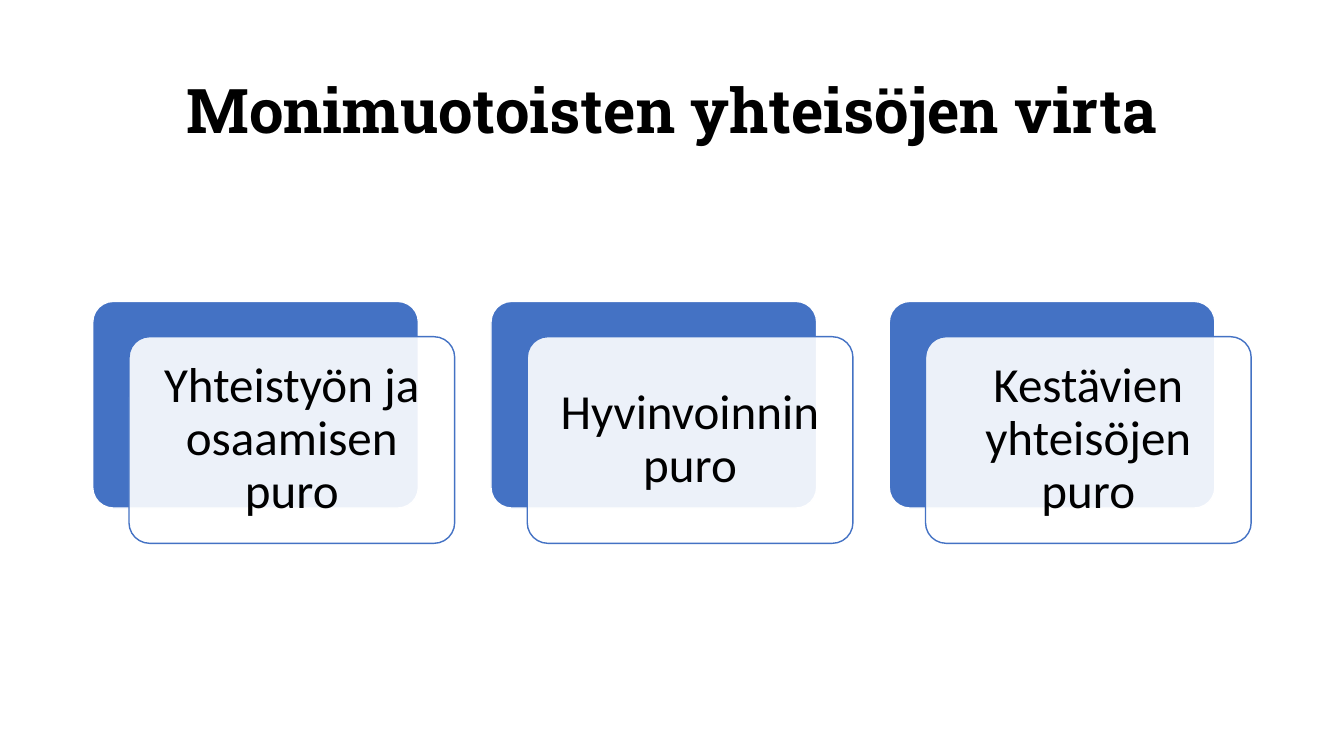
from lxml import etree
from pptx import Presentation
from pptx import util as u
from pptx.dml.color import RGBColor
from pptx.enum import shapes, text
from pptx.oxml.ns import qn


def colour(value):
    return RGBColor.from_string(value)


class StreamSlide:
    """Draws a title and layered cards on one slide in a shared style."""

    BLUE, WHITE, BLACK = "4472C4", "FFFFFF", "000000"
    CARD_WIDTH, CARD_HEIGHT = 3.23, 2.05
    SHIFT_X, SHIFT_Y = 0.36, 0.35

    def __init__(self, presentation):
        self.slide = presentation.slides.add_slide(presentation.slide_layouts[5])

    def set_text(self, shape, wording, size, font, bold=False):
        frame = shape.text_frame
        frame.text = wording
        frame.word_wrap = True
        frame.vertical_anchor = text.MSO_ANCHOR.MIDDLE
        paragraph = frame.paragraphs[0]
        paragraph.alignment = text.PP_ALIGN.CENTER
        paragraph.line_spacing = 0.9
        paragraph.font.size = u.Pt(size)
        paragraph.font.name = font
        paragraph.font.bold = bold
        paragraph.font.color.rgb = colour(self.BLACK)
        return frame

    def title(self, wording):
        shape = self.slide.shapes.title
        shape.left, shape.top = u.Inches(0.92), u.Inches(0.4)
        shape.width, shape.height = u.Inches(11.5), u.Inches(1.45)
        self.set_text(shape, wording, 44, "Roboto Slab", bold=True)

    def panel(self, left, top, fill, line, opacity=100):
        shape = self.slide.shapes.add_shape(
            shapes.MSO_SHAPE.ROUNDED_RECTANGLE, u.Inches(left), u.Inches(top),
            u.Inches(self.CARD_WIDTH), u.Inches(self.CARD_HEIGHT))
        shape.adjustments[0] = 0.1
        shape.shadow.inherit = False
        shape.fill.solid()
        shape.fill.fore_color.rgb = colour(fill)
        shape.line.color.rgb = colour(line)
        shape.line.width = u.Pt(1)
        if opacity < 100:
            fill_colour = shape._element.spPr.find(qn("a:solidFill"))[0]
            alpha = etree.SubElement(fill_colour, qn("a:alpha"))
            alpha.set("val", str(opacity * 1000))
        return shape

    def card(self, left, top, wording):
        self.panel(left, top, self.BLUE, self.WHITE)
        front = self.panel(left + self.SHIFT_X, top + self.SHIFT_Y,
                           self.WHITE, self.BLUE, opacity=90)
        frame = self.set_text(front, wording, 35, "Calibri")
        frame.margin_left = frame.margin_right = u.Inches(0.15)
        frame.margin_top = frame.margin_bottom = u.Inches(0.15)


def main():
    presentation = Presentation()
    presentation.slide_width = u.Inches(13.33)
    presentation.slide_height = u.Inches(7.5)
    page = StreamSlide(presentation)
    page.title("Monimuotoisten yhteisöjen virta")
    streams = ["Yhteistyön ja osaamisen puro", "Hyvinvoinnin puro",
               "Kestävien yhteisöjen puro"]
    for index, stream in enumerate(streams):
        page.card(0.92 + index * 3.95, 2.99, stream)
    presentation.save("out.pptx")


if __name__ == "__main__":
    main()
